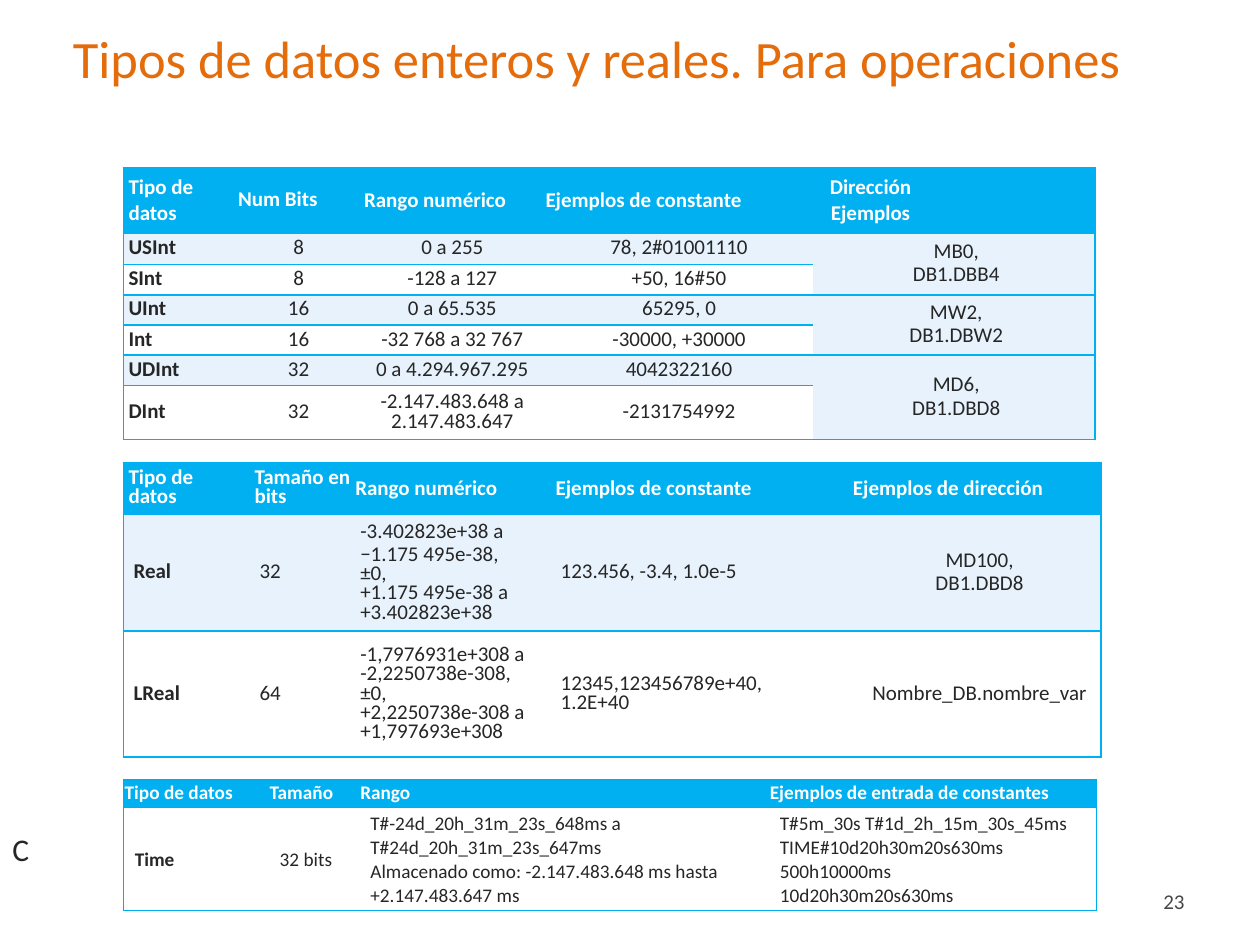
from lxml.etree import SubElement
from pptx import Presentation
from pptx.dml.color import RGBColor
from pptx.enum.text import MSO_ANCHOR, PP_ALIGN
from pptx.oxml import parse_xml
from pptx.oxml.ns import qn
from pptx.util import Inches, Pt

FONT = "Calibri"
CYAN, PALE, WHITE, INK = "00B0F0", "E7F2FC", "FFFFFF", "262626"
DRAWING = "http://schemas.openxmlformats.org/drawingml/2006/main"
PLAIN_TABLE = "{2D5ABB26-0587-4C30-8999-92F81FD0307C}"
LEFT, CENTER, RIGHT = PP_ALIGN.LEFT, PP_ALIGN.CENTER, PP_ALIGN.RIGHT

CAPTIONS = [
    ("Tipos de datos enteros y reales. Para operaciones",
     (0.48, 0.08, 9.19, 0.75), 30, "E46C0A", LEFT, MSO_ANCHOR.MIDDLE),
    ("23", (7.17, 6.95, 2.33, 0.4), 12, "474747", RIGHT, MSO_ANCHOR.MIDDLE),
    ("C", (0, 6.54, 0.34, 0.4), 18, INK, LEFT, MSO_ANCHOR.TOP),
]

INTEGERS = dict(
    at=(0.98, 1.33), cols=[0.87, 1, 1.44, 2.16, 2.24],
    heights=[0.52, 0.25, 0.24, 0.24, 0.24, 0.24, 0.43],
    size=12, indent=0.04, line=(CYAN, 1), band=PALE,
    aligns=[LEFT, CENTER, CENTER, CENTER, CENTER],
    header_aligns=[LEFT, LEFT, LEFT, LEFT, CENTER],
    header_spacing=[Pt(15), 0.76, Pt(15), Pt(15), Pt(15)],
    spacing=(13.3, 11), right_insets={(0, 4): 1.36},
    merges=[(1, 2), (3, 4), (5, 6)],
    rows=[
        ["Tipo de datos", "Num Bits", "Rango numérico", "Ejemplos de constante",
         "Dirección Ejemplos"],
        ["USInt", "8", "0 a 255", "78, 2#01001110", "MB0,\nDB1.DBB4"],
        ["SInt", "8", "-128 a 127", "+50, 16#50", None],
        ["UInt", "16", "0 a 65.535", "65295, 0", "MW2,\nDB1.DBW2"],
        ["Int", "16", "-32 768 a 32 767", "-30000, +30000", None],
        ["UDInt", "32", "0 a 4.294.967.295", "4042322160", "MD6,\nDB1.DBD8"],
        ["DInt", "32", "-2.147.483.648 a\n2.147.483.647", "-2131754992", None],
    ],
)

REALS = dict(
    at=(0.98, 3.67), cols=[1, 0.8, 1.59, 2.36, 2.01], heights=[0.41, 0.93, 1],
    size=12, indent=0.08, header_indent=0.04, line=(CYAN, 1), band=PALE,
    aligns=[LEFT, LEFT, LEFT, LEFT, CENTER], header_aligns=[LEFT] * 5,
    header_spacing=[0.76, 0.76, Pt(15), Pt(15), Pt(15)],
    spacing=(13.3, 11), right_insets={(0, 0): 0.2},
    rows=[
        ["Tipo de datos", "Tamaño en bits", "Rango numérico",
         "Ejemplos de constante", "Ejemplos de dirección"],
        ["Real", "32",
         "-3.402823e+38 a −1.175 495e-38,\n±0,\n+1.175 495e-38 a +3.402823e+38",
         "123.456, -3.4, 1.0e-5", "MD100,\nDB1.DBD8"],
        ["LReal", "64",
         "-1,7976931e+308 a\n-2,2250738e-308,\n±0,\n"
         "+2,2250738e-308 a\n+1,797693e+308",
         "12345,123456789e+40,\n1.2E+40", "Nombre_DB.nombre_var"],
    ],
)

TIMES = dict(
    at=(0.98, 6.19), cols=[1.15, 0.72, 3.25, 2.6], heights=[0.22, 0.82],
    size=11, indent=0.08, header_indent=0, line=("00ACEB", 0.75), band=WHITE,
    aligns=[LEFT] * 4, header_aligns=[LEFT] * 4, header_spacing=[None] * 4,
    inset=0.01, header_anchor=MSO_ANCHOR.TOP,
    rows=[
        ["Tipo de datos", "Tamaño", "Rango", "Ejemplos de entrada de constantes"],
        ["Time", "32 bits",
         "T#-24d_20h_31m_23s_648ms a T#24d_20h_31m_23s_647ms\n"
         "Almacenado como: -2.147.483.648 ms hasta\n+2.147.483.647 ms",
         "T#5m_30s T#1d_2h_15m_30s_45ms TIME#10d20h30m20s630ms 500h10000ms\n"
         "10d20h30m20s630ms"],
    ],
)


def rgb(value):
    """Turn a hex string into a colour."""
    return RGBColor.from_string(value)


def add_run(paragraph, text, size, color, bold=False):
    """Append one styled run."""
    run = paragraph.add_run()
    run.text = text
    run.font.name, run.font.size, run.font.bold = FONT, Pt(size), bold
    run.font.color.rgb = rgb(color)


def add_caption(slide, text, box, size, color, align, anchor):
    """Place one line of free text."""
    frame = slide.shapes.add_textbox(*map(Inches, box)).text_frame
    frame.word_wrap, frame.vertical_anchor = True, anchor
    frame.paragraphs[0].alignment = align
    add_run(frame.paragraphs[0], text, size, color)


def set_borders(cell, sides, color, width):
    """Draw the named sides of a cell and clear the others."""
    properties = cell._tc.get_or_add_tcPr()
    for index, side in enumerate("LRTB"):
        paint = (f'<a:solidFill><a:srgbClr val="{color}"/></a:solidFill>'
                 if side in sides else "<a:noFill/>")
        properties.insert(index, parse_xml(
            f'<a:ln{side} xmlns:a="{DRAWING}" w="{Pt(width)}">{paint}</a:ln{side}>'))


def fill_cell(cell, data, row, col):
    """Write and style one table cell."""
    header = row == 0
    inset = data.get("inset", 0)
    cell.margin_left = cell.margin_top = Inches(inset)
    cell.margin_right = Inches(data.get("right_insets", {}).get((row, col), inset))
    cell.margin_bottom = 0
    cell.vertical_anchor = (data.get("header_anchor", MSO_ANCHOR.MIDDLE)
                            if header else MSO_ANCHOR.MIDDLE)
    cell.fill.solid()
    cell.fill.fore_color.rgb = rgb(CYAN if header else data["band"] if row % 2 else WHITE)
    last = len(data["cols"]) - 1
    sides = "TB" + "L" * (col == 0) + "R" * (col == last)
    set_borders(cell, sides, *data["line"])
    indent = data.get("header_indent", data["indent"]) if header else data["indent"]
    for index, text in enumerate((data["rows"][row][col] or "").split("\n")):
        frame = cell.text_frame
        paragraph = frame.add_paragraph() if index else frame.paragraphs[0]
        paragraph._p.get_or_add_pPr().set("marL", str(Inches(indent)))
        paragraph.alignment = data["header_aligns" if header else "aligns"][col]
        if header:
            paragraph.line_spacing = data["header_spacing"][col]
        elif "spacing" in data:
            paragraph.line_spacing = Pt(data["spacing"][index > 0 and col < last])
        if text:
            add_run(paragraph, text, data["size"], WHITE if header else INK,
                    header or col == 0)


def add_data_table(slide, data):
    """Build one data type table."""
    cols, heights = data["cols"], data["heights"]
    box = (*data["at"], sum(cols), sum(heights))
    table = slide.shapes.add_table(len(heights), len(cols), *map(Inches, box)).table
    style = table._tbl.tblPr.find(qn("a:tableStyleId"))
    if style is None:
        style = SubElement(table._tbl.tblPr, qn("a:tableStyleId"))
    style.text = PLAIN_TABLE
    for column, width in zip(table.columns, cols):
        column.width = Inches(width)
    for line, height in zip(table.rows, heights):
        line.height = Inches(height)
    for first, final in data.get("merges", []):
        table.cell(first, len(cols) - 1).merge(table.cell(final, len(cols) - 1))
    for row in range(len(heights)):
        for col in range(len(cols)):
            if not table.cell(row, col).is_spanned:
                fill_cell(table.cell(row, col), data, row, col)


def main():
    """Build the slide and save it."""
    deck = Presentation()
    deck.slide_width, deck.slide_height = Inches(10), Inches(7.5)
    slide = deck.slides.add_slide(deck.slide_layouts[6])
    for data in (INTEGERS, REALS, TIMES):
        add_data_table(slide, data)
    for caption in CAPTIONS:
        add_caption(slide, *caption)
    deck.save("out.pptx")


if __name__ == "__main__":
    main()
